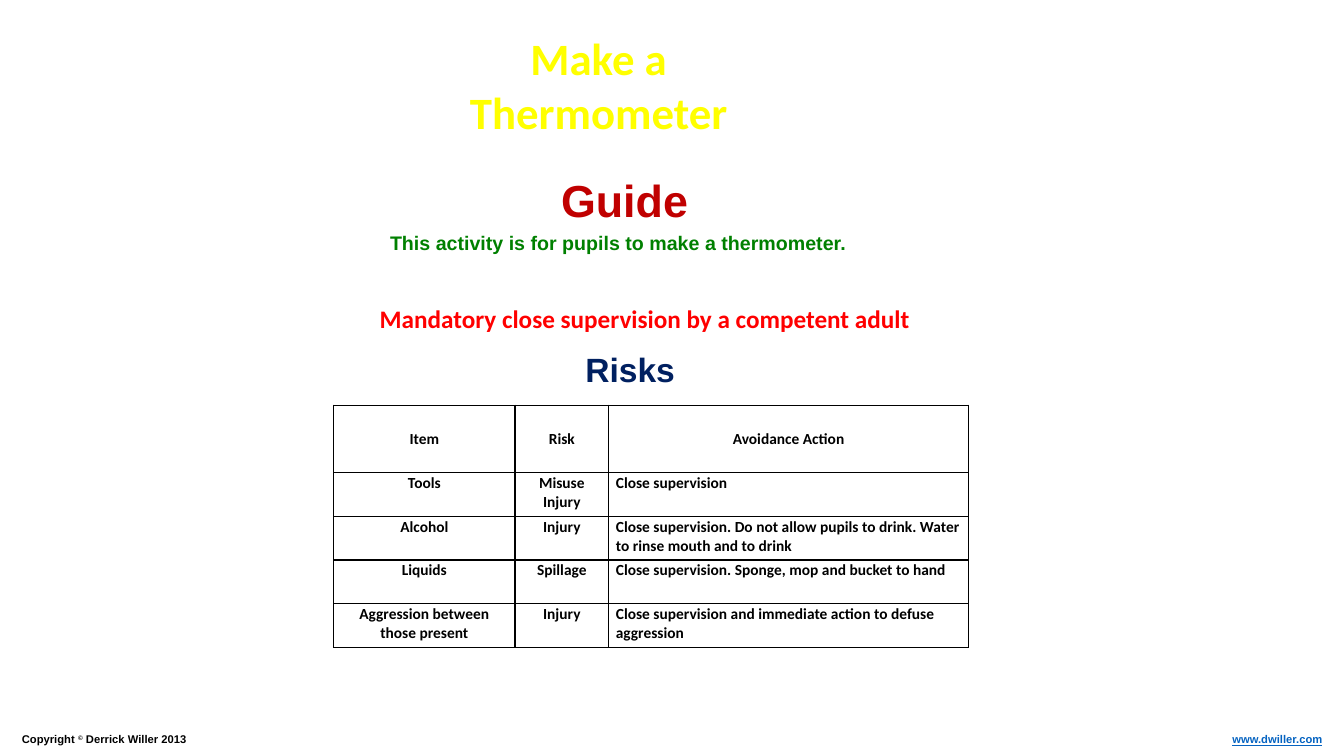
from dataclasses import dataclass

from lxml.etree import SubElement as Sub
from pptx import Presentation as Deck
from pptx.dml.color import RGBColor as Rgb
from pptx.enum.text import MSO_ANCHOR as Anchor
from pptx.enum.text import MSO_AUTO_SIZE as Auto
from pptx.enum.text import PP_ALIGN as Align
from pptx.oxml import parse_xml as to_xml
from pptx.oxml.ns import nsdecls as decls
from pptx.oxml.ns import qn
from pptx.slide import Slide
from pptx.util import Cm, Pt


@dataclass(frozen=True)
class Theme:
    sans: str = "Arial"
    body: str = "Calibri"
    black: str = "000000"
    yellow: str = "FFFF00"
    orange: str = "ED7D31"
    maroon: str = "C00000"
    green: str = "008000"
    navy: str = "002060"
    red: str = "FF0000"
    blue: str = "0563C1"
    small: float = 8
    cell: float = 11
    note: float = 14
    alert: float = 18
    head: float = 24
    title: float = 32


@dataclass(frozen=True)
class Label:
    text: str
    box: tuple[float, float, float, float]
    face: str
    size: float
    color: str
    align: Align = Align.LEFT
    wrap: bool = True
    edge: str = ""
    under: bool = False
    raised: str = ""


T = Theme()

LABELS = [
    Label("Copyright © Derrick Willer 2013", (0.3, 18.34, 14.35, 0.61),
          T.sans, T.small, T.black, raised="©"),
    Label("www.dwiller.com", (30.18, 18.34, 3.4, 0.61),
          T.sans, T.small, T.blue, Align.RIGHT, under=True),
    Label("Make a Thermometer", (9.96, 0.66, 10.26, 1.63),
          T.body, T.title, T.yellow, Align.CENTER, edge=T.orange),
    Label("Guide", (13.89, 4.24, 3.73, 1.63),
          T.sans, T.title, T.maroon, wrap=False),
    Label("This activity is for pupils to make a thermometer.",
          (9.58, 5.69, 22.63, 0.86), T.sans, T.note, T.green),
    Label("Mandatory close supervision by a competent adult",
          (9.32, 7.52, 15.93, 1.02), T.body, T.alert, T.red),
    Label("Risks", (14.5, 8.66, 2.79, 1.3),
          T.sans, T.head, T.navy, wrap=False),
]

RISKS = [
    ("Item", "Risk", "Avoidance Action"),
    ("Tools", "Misuse Injury", "Close supervision"),
    ("Alcohol", "Injury", "Close supervision. Do not allow pupils to drink. "
     "Water to rinse mouth and to drink"),
    ("Liquids", "Spillage", "Close supervision. Sponge, mop and bucket to hand"),
    ("Aggression between those present", "Injury",
     "Close supervision and immediate action to defuse aggression"),
]
COLS = (4.57, 2.36, 9.07)
ROWS = (1.7, 1.1, 1.1, 1.1, 1.1)


def put(item: object, form: dict) -> None:
    for name, value in form.items():
        setattr(item, name, value)


def style(font: object, face: str, size: float, color: str,
          under: bool = False) -> None:
    put(font, {"name": face, "size": Pt(size), "bold": True,
               "underline": under})
    font.color.rgb = Rgb.from_string(color)


def outline(tag: str, color: str, width: float) -> object:
    line = to_xml(f'<a:{tag} {decls("a")} w="{Pt(width)}"/>')
    fill = Sub(line, qn("a:solidFill"))
    Sub(fill, qn("a:srgbClr"), val=color)
    return line


def draw_label(slide: Slide, label: Label) -> None:
    frame = slide.shapes.add_textbox(*map(Cm, label.box)).text_frame
    put(frame, {"word_wrap": label.wrap,
                "auto_size": Auto.SHAPE_TO_FIT_TEXT})
    para = frame.paragraphs[0]
    para.alignment = label.align
    # Split around the raised sign, if there is one
    parts = label.text.partition(label.raised) if label.raised else [label.text]
    for part in parts:
        run = para.add_run()
        run.text = part
        style(run.font, label.face, label.size, label.color, label.under)
        props = run._r.get_or_add_rPr()
        if part == label.raised:
            props.set("baseline", "30000")
        if label.edge:
            props.insert(0, outline("ln", label.edge, 1.75))


def draw_table(slide: Slide) -> None:
    grid = slide.shapes.add_table(
        len(ROWS), len(COLS), Cm(8.41), Cm(10.21),
        Cm(sum(COLS)), Cm(sum(ROWS))).table
    put(grid, {"first_row": False, "horz_banding": False})
    for col, width in zip(grid.columns, COLS):
        col.width = Cm(width)
    for r, (row, high) in enumerate(zip(RISKS, ROWS)):
        grid.rows[r].height = Cm(high)
        for c, text in enumerate(row):
            cell = grid.cell(r, c)
            put(cell, {
                "text": text,
                "margin_left": Cm(0.18), "margin_right": Cm(0.18),
                "margin_top": Cm(0.03), "margin_bottom": Cm(0),
                "vertical_anchor": Anchor.TOP if r else Anchor.MIDDLE})
            para = cell.text_frame.paragraphs[0]
            para.alignment = Align.LEFT if r and c == 2 else Align.CENTER
            style(para.runs[0].font, T.body, T.cell, T.black)
            cell.fill.background()
            # Borders come before the fill
            props = cell._tc.get_or_add_tcPr()
            for i, side in enumerate("LRTB"):
                props.insert(i, outline(f"ln{side}", T.black, 1))


def main() -> None:
    deck = Deck()
    put(deck, {"slide_width": Cm(33.87), "slide_height": Cm(19.05)})
    slide = deck.slides.add_slide(deck.slide_layouts[6])
    # Headings, notes and footer
    for label in LABELS:
        draw_label(slide, label)
    # Risk table
    draw_table(slide)
    deck.save("out.pptx")


if __name__ == "__main__":
    main()
